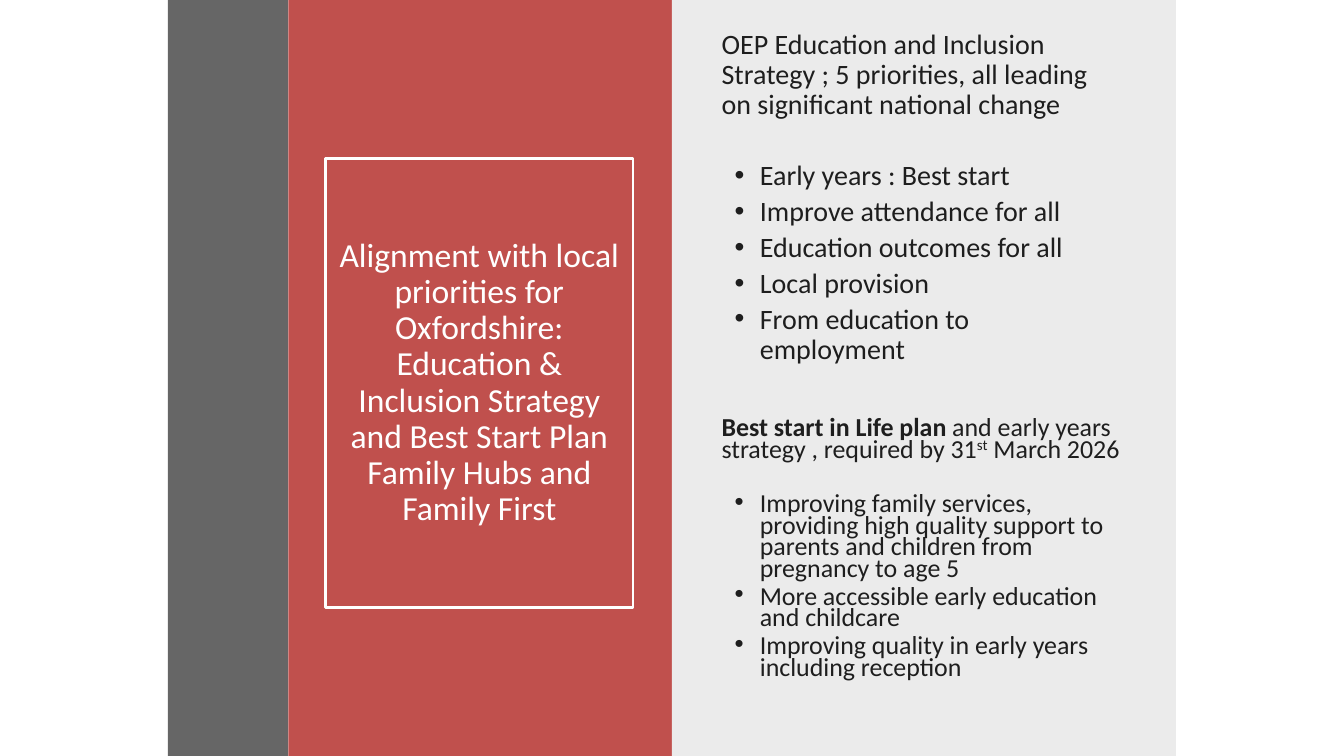
from collections import namedtuple

from lxml.etree import SubElement
from pptx import Presentation
from pptx.dml.color import RGBColor
from pptx.enum.shapes import MSO_SHAPE
from pptx.enum.text import MSO_ANCHOR, MSO_AUTO_SIZE, PP_ALIGN
from pptx.oxml.ns import qn
from pptx.util import Inches, Pt

COLUMNS, ROWS = 80, 45
SLIDE_WIDTH, SLIDE_HEIGHT = Inches(13.33), Inches(7.5)

WHITE = RGBColor(0xFF, 0xFF, 0xFF)
INK = RGBColor(0x1E, 0x1E, 0x1E)
RED = RGBColor(0xC0, 0x50, 0x4D)
DARK_GREY = RGBColor(0x66, 0x66, 0x66)
LIGHT_GREY = RGBColor(0xEB, 0xEB, 0xEB)

FONT = "Calibri"
ITEM_GAP = 4

Box = namedtuple("Box", "column row columns rows")
Section = namedtuple("Section", "box size line_spacing list_gap heading items")

TITLE = (
    "Alignment with local priorities for Oxfordshire: Education & Inclusion "
    "Strategy and Best Start Plan Family Hubs and Family First"
)

SECTIONS = [
    Section(
        Box(2.36, 1.5, 24.6, 19.4), 20, 0.9, 29,
        [("OEP Education and Inclusion Strategy ; 5 priorities, all leading "
          "on significant national change", {})],
        ["Early years : Best start", "Improve attendance for all",
         "Education outcomes for all", "Local provision",
         "From education to employment"],
    ),
    Section(
        Box(2.36, 24.66, 24.9, 18.8), 18.5, 0.7, 23,
        [("Best start in Life plan ", {"bold": True}),
         ("and early years strategy , required by 31", {}),
         ("st", {"baseline": "30000"}),
         (" March 2026", {})],
        ["Improving family services, providing high quality support to "
         "parents and children from pregnancy to age 5",
         "More accessible early education and childcare",
         "Improving quality in early years including reception"],
    ),
]


def set_attributes(target, values):
    for name, value in values.items():
        setattr(target, name, value)


def place(box):
    column, row = SLIDE_WIDTH / COLUMNS, SLIDE_HEIGHT / ROWS
    return {
        "left": round(box.column * column),
        "top": round(box.row * row),
        "width": round(box.columns * column),
        "height": round(box.rows * row),
    }


def inside(outer, inner):
    return inner._replace(column=outer.column + inner.column,
                          row=outer.row + inner.row)


def add_panel(slide, box, color):
    panel = slide.shapes.add_shape(MSO_SHAPE.RECTANGLE, **place(box))
    panel.shadow.inherit = False
    panel.fill.solid()
    panel.fill.fore_color.rgb = color
    panel.line.fill.background()


def add_run(paragraph, text, size, color, bold=False, baseline=None):
    run = paragraph.add_run()
    run.text = text
    set_attributes(run.font, {"name": FONT, "size": Pt(size), "bold": bold})
    run.font.color.rgb = color
    if baseline:
        run.font._element.set("baseline", baseline)


def add_bullet(paragraph):
    properties = paragraph._p.get_or_add_pPr()
    properties.set("marL", str(Inches(0.38)))
    properties.set("indent", str(Inches(-0.25)))
    SubElement(properties, qn("a:buFont")).set("typeface", "Arial")
    SubElement(properties, qn("a:buChar")).set("char", "•")


def add_title_panel(slide, box):
    add_panel(slide, box, RED)
    title = slide.shapes.title
    slide.shapes._spTree.append(title._element)
    set_attributes(title, place(inside(box, Box(2.22, 9.42, 18.3, 26.76))))
    set_attributes(title.line, {"width": Pt(2)})
    title.line.color.rgb = WHITE
    set_attributes(title.text_frame, {
        "word_wrap": True,
        "auto_size": MSO_AUTO_SIZE.NONE,
        "vertical_anchor": MSO_ANCHOR.MIDDLE,
    })
    paragraph = title.text_frame.paragraphs[0]
    set_attributes(paragraph, {"alignment": PP_ALIGN.CENTER,
                               "line_spacing": 0.9})
    add_run(paragraph, TITLE, 24, WHITE)


def add_section(slide, box, section):
    frame = slide.shapes.add_textbox(**place(box)).text_frame
    frame.word_wrap = True
    heading = frame.paragraphs[0]
    heading.line_spacing = section.line_spacing
    for text, style in section.heading:
        add_run(heading, text, section.size, INK, **style)
    for index, text in enumerate(section.items):
        paragraph = frame.add_paragraph()
        set_attributes(paragraph, {
            "line_spacing": section.line_spacing,
            "space_before": Pt(ITEM_GAP if index else section.list_gap),
        })
        add_bullet(paragraph)
        add_run(paragraph, text, section.size, INK)


def add_strategy_panel(slide, box):
    add_panel(slide, box, LIGHT_GREY)
    for section in SECTIONS:
        add_section(slide, inside(box, section.box), section)


def main():
    presentation = Presentation()
    set_attributes(presentation, {"slide_width": SLIDE_WIDTH,
                                  "slide_height": SLIDE_HEIGHT})
    slide = presentation.slides.add_slide(presentation.slide_layouts[5])
    add_panel(slide, Box(10, 0, 7.16, ROWS), DARK_GREY)
    add_title_panel(slide, Box(17.16, 0, 22.84, ROWS))
    add_strategy_panel(slide, Box(40, 0, 30, ROWS))
    presentation.save("out.pptx")


if __name__ == "__main__":
    main()
